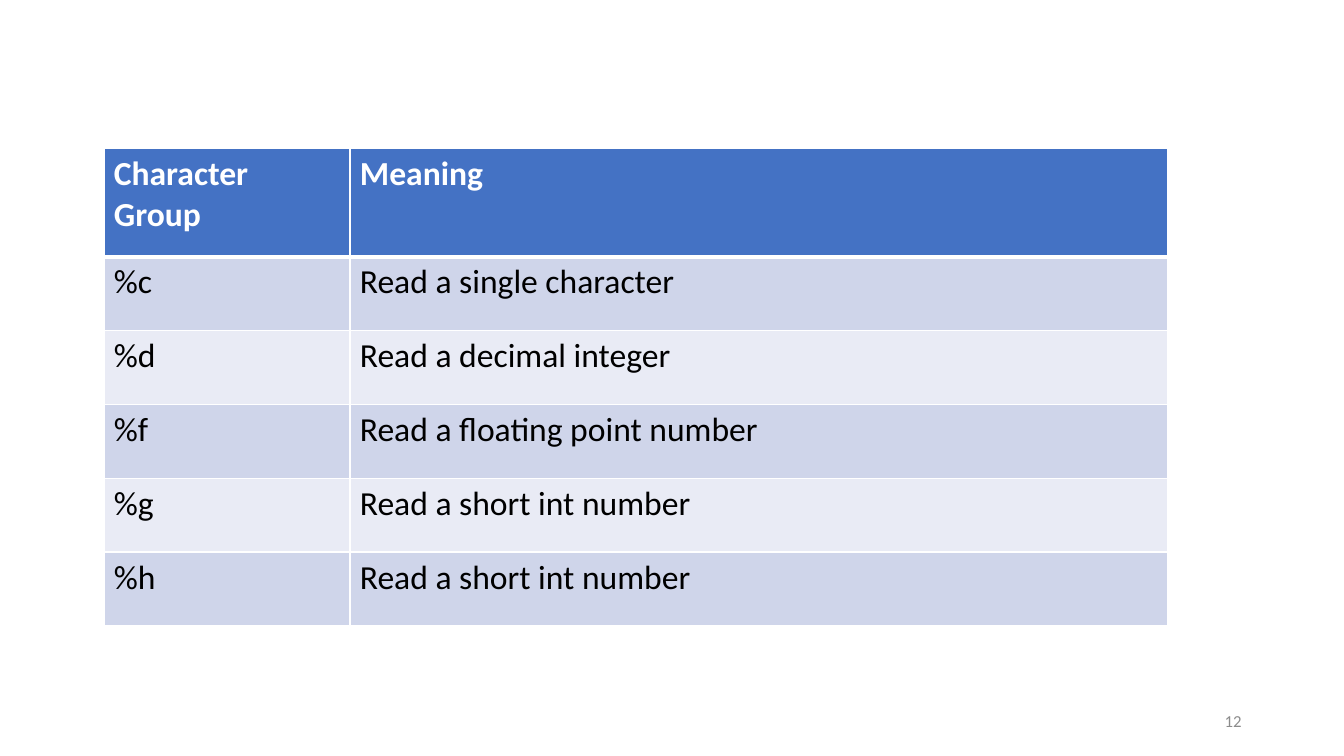
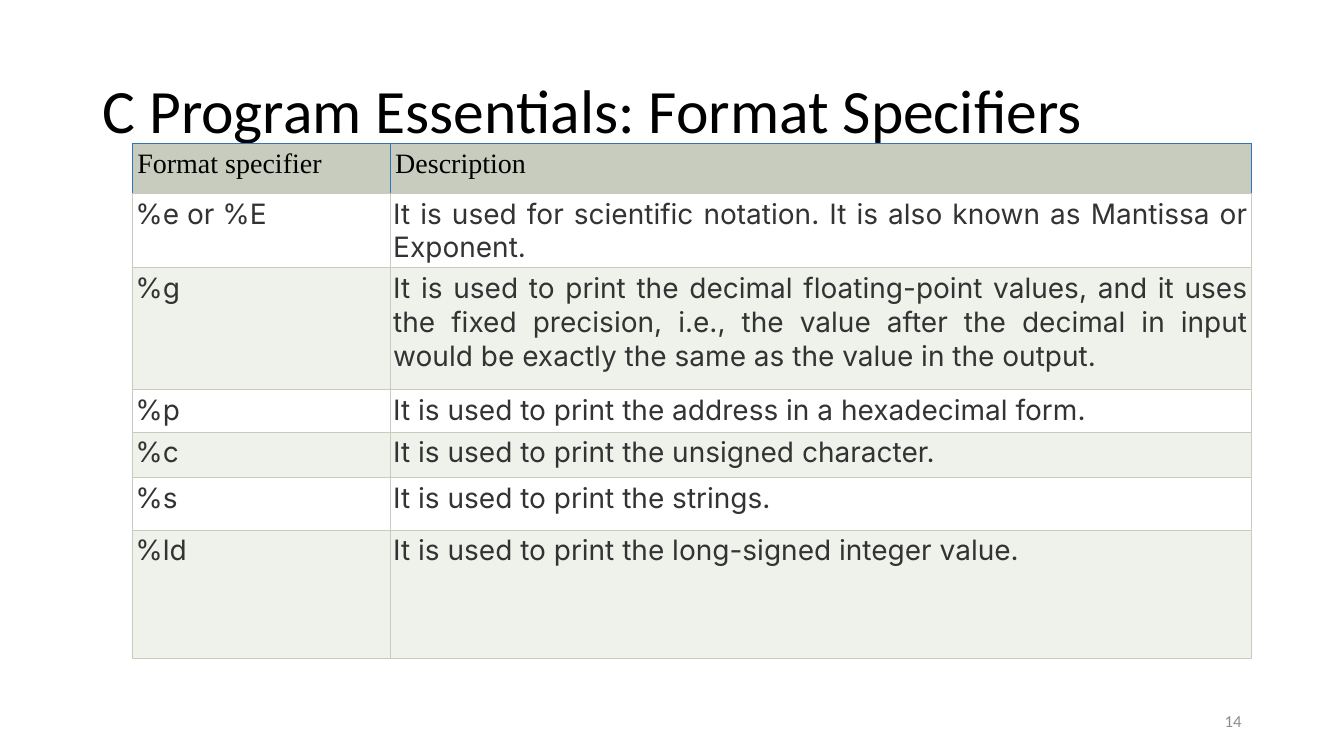
from dataclasses import dataclass

from lxml import etree
from pptx import Presentation, util as u
from pptx.dml.color import RGBColor
from pptx.enum import text
from pptx.oxml import ns

COLORS = {
    "black": "000000",
    "white": "FFFFFF",
    "number": "8C8C8C",
    "blue": "4472C4",
    "blue_dark": "CFD5EA",
    "blue_light": "E9EBF5",
    "edge": "3076B4",
    "sage": "C7CCBE",
    "sage_light": "EFF1EB",
    "ink": "333333",
}
FONT = "Calibri"
TITLE_ONLY, BLANK = 5, 6


@dataclass(frozen=True)
class Line:
    color: str
    width: float


@dataclass(frozen=True)
class RowStyle:
    font: str
    size: int
    color: str
    fills: tuple[str, ...]
    edge: Line
    bold: bool = False
    align: text.PP_ALIGN = text.PP_ALIGN.LEFT
    inset_x: float = 0.25
    inset_y: float = 0.13


@dataclass(frozen=True)
class TableSpec:
    left: float
    top: float
    columns: tuple[float, ...]
    heights: tuple[float, ...]
    header: RowStyle
    body: RowStyle
    divider: Line
    rows: tuple[tuple[str, str], ...]


@dataclass(frozen=True)
class Page:
    number: int
    table: TableSpec
    title: str = ""


# Content and table looks
WHITE_LINE = Line("white", 1)
SAGE_LINE = Line("sage", 0.75)

READ_TABLE = TableSpec(
    left=2.62, top=3.73, columns=(6.2, 20.6), heights=(2.74,) + (1.86,) * 5,
    header=RowStyle(FONT, 24, "white", ("blue",), WHITE_LINE, bold=True),
    body=RowStyle(FONT, 24, "black", ("blue_dark", "blue_light"), WHITE_LINE),
    divider=Line("white", 3),
    rows=(
        ("Character Group", "Meaning"),
        ("%c", "Read a single character"),
        ("%d", "Read a decimal integer"),
        ("%f", "Read a floating point number"),
        ("%g", "Read a short int number"),
        ("%h", "Read a short int number"),
    ),
)

PRINT_TABLE = TableSpec(
    left=3.33, top=3.61, columns=(6.5, 21.7),
    heights=(1.27, 1.27, 3.07, 1.07, 1.15, 1.32, 3.22),
    header=RowStyle("Times New Roman", 20, "black", ("sage",), Line("edge", 0.75),
                    inset_x=0.13),
    body=RowStyle("Inter", 20, "ink", ("white", "sage_light"), SAGE_LINE,
                  align=text.PP_ALIGN.JUSTIFY, inset_x=0.08, inset_y=0.08),
    divider=SAGE_LINE,
    rows=(
        ("Format specifier", "Description"),
        ("%e or %E", "It is used for scientific notation. It is also known as "
                     "Mantissa or Exponent."),
        ("%g", "It is used to print the decimal floating-point values, and it uses "
               "the fixed precision, i.e., the value after the decimal in input "
               "would be exactly the same as the value in the output."),
        ("%p", "It is used to print the address in a hexadecimal form."),
        ("%c", "It is used to print the unsigned character."),
        ("%s", "It is used to print the strings."),
        ("%ld", "It is used to print the long-signed integer value."),
    ),
)

PAGES = (
    Page(12, READ_TABLE),
    Page(14, PRINT_TABLE, "C Program Essentials: Format Specifiers"),
)


def rgb(name: str) -> RGBColor:
    return RGBColor.from_string(COLORS[name])


def write(frame, content: str, font: str, size: int, color: str,
          align: text.PP_ALIGN, bold: bool = False) -> None:
    frame.text = content
    para = frame.paragraphs[0]
    para.alignment = align
    for span in para.runs:
        span.font.name = font
        span.font.size = u.Pt(size)
        span.font.bold = bold
        span.font.color.rgb = rgb(color)


def set_borders(cell, edge: Line, top: Line, bottom: Line) -> None:
    """Put the four lines ahead of the fill, in schema order."""
    properties = cell._tc.get_or_add_tcPr()
    sides = (("lnL", edge), ("lnR", edge), ("lnT", top), ("lnB", bottom))
    for index, (tag, line) in enumerate(sides):
        border = etree.Element(ns.qn(f"a:{tag}"), w=str(u.Pt(line.width)))
        fill = etree.SubElement(border, ns.qn("a:solidFill"))
        etree.SubElement(fill, ns.qn("a:srgbClr"), val=COLORS[line.color])
        properties.insert(index, border)


def add_grid(slide, grid: TableSpec) -> None:
    table = slide.shapes.add_table(
        len(grid.rows), len(grid.columns), u.Cm(grid.left), u.Cm(grid.top),
        u.Cm(sum(grid.columns)), u.Cm(sum(grid.heights))).table
    table.first_row = table.horz_banding = False
    for column, width in zip(table.columns, grid.columns):
        column.width = u.Cm(width)
    for index, (row, height) in enumerate(zip(table.rows, grid.heights)):
        row.height = u.Cm(height)
        style = grid.body if index else grid.header
        # The divider is shared by the header and the first body row
        top = grid.divider if index == 1 else style.edge
        bottom = style.edge if index else grid.divider
        fill = style.fills[(index - 1) % len(style.fills)]
        for cell, content in zip(row.cells, grid.rows[index]):
            cell.fill.solid()
            cell.fill.fore_color.rgb = rgb(fill)
            cell.margin_left = cell.margin_right = u.Cm(style.inset_x)
            cell.margin_top = cell.margin_bottom = u.Cm(style.inset_y)
            write(cell.text_frame, content, style.font, style.size, style.color,
                  style.align, style.bold)
            set_borders(cell, style.edge, top, bottom)


def set_title(slide, content: str) -> None:
    title = slide.shapes.title
    title.left, title.top = u.Cm(2.33), u.Cm(1.01)
    title.width, title.height = u.Cm(29.21), u.Cm(3.68)
    frame = title.text_frame
    frame.auto_size = text.MSO_AUTO_SIZE.NONE
    frame.vertical_anchor = text.MSO_ANCHOR.MIDDLE
    write(frame, content, FONT, 44, "black", text.PP_ALIGN.LEFT)
    frame.paragraphs[0].line_spacing = 0.9


def add_page_number(slide, number: int) -> None:
    box = slide.shapes.add_textbox(u.Cm(23.92), u.Cm(17.65), u.Cm(7.62), u.Cm(1.01))
    box.text_frame.word_wrap = True
    box.text_frame.vertical_anchor = text.MSO_ANCHOR.MIDDLE
    write(box.text_frame, str(number), FONT, 12, "number", text.PP_ALIGN.RIGHT)


def main() -> None:
    deck = Presentation()
    deck.slide_width, deck.slide_height = u.Cm(33.87), u.Cm(19.05)
    for page in PAGES:
        layout = deck.slide_layouts[TITLE_ONLY if page.title else BLANK]
        slide = deck.slides.add_slide(layout)
        if page.title:
            set_title(slide, page.title)
        add_grid(slide, page.table)
        add_page_number(slide, page.number)
    deck.save("out.pptx")


if __name__ == "__main__":
    main()
